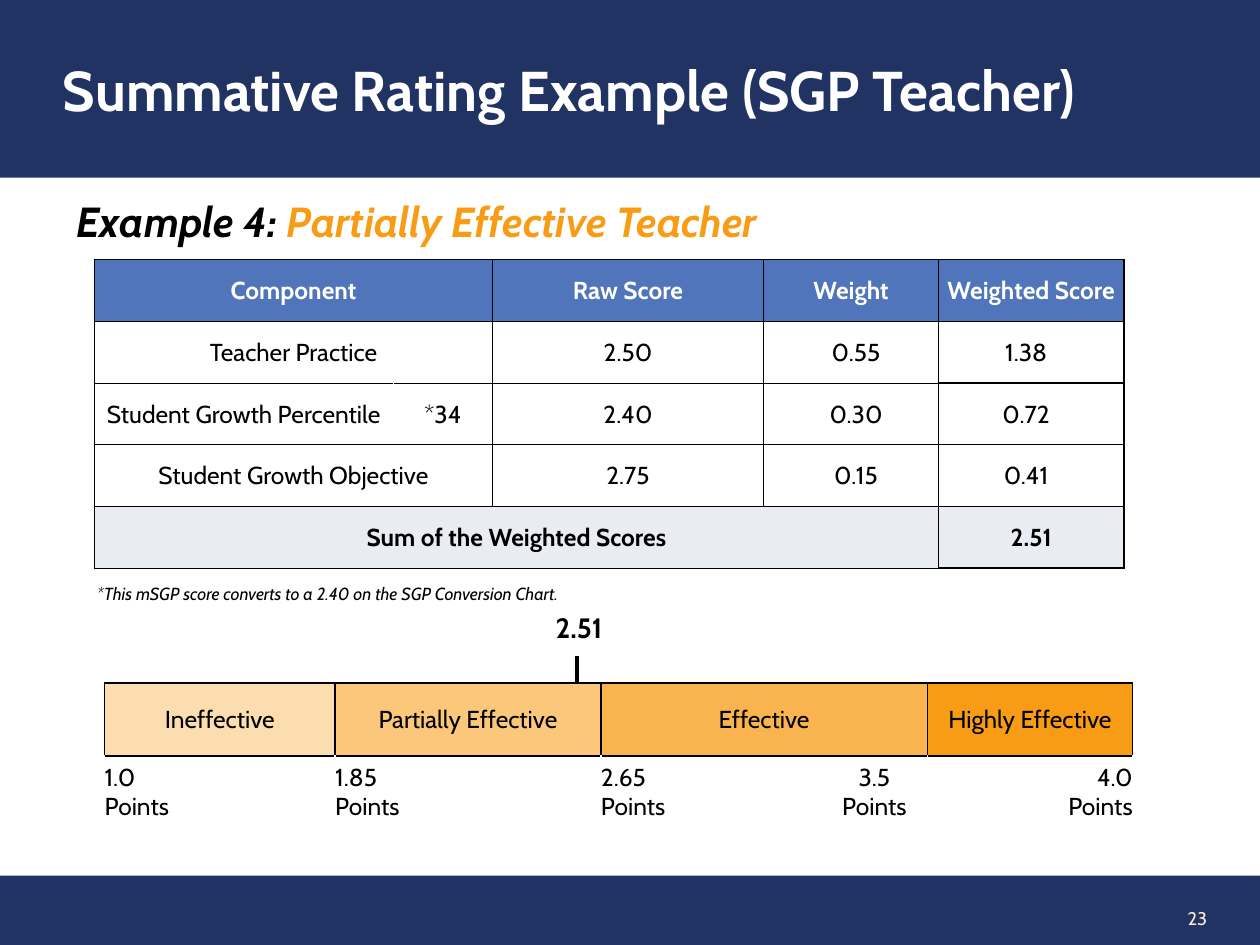
from dataclasses import dataclass
from typing import Any

from lxml import etree
from pptx import Presentation
from pptx import util as u
from pptx.dml.color import RGBColor
from pptx.enum import shapes, text
from pptx.oxml import ns

NAVY, BLUE, PALE, ORANGE = "213363", "5075BB", "E9ECF3", "F89C15"
BLACK, WHITE, CREAM = "000000", "FFFFFF", "FEEBD0"
LEFT, CENTER, RIGHT = text.PP_ALIGN.LEFT, text.PP_ALIGN.CENTER, text.PP_ALIGN.RIGHT
MIDDLE, TOP = text.MSO_ANCHOR.MIDDLE, text.MSO_ANCHOR.TOP


def rgb(value):
    return RGBColor.from_string(value)


def child(parent, tag, **attributes):
    return etree.SubElement(parent, ns.qn(tag), attributes)


def write(frame, lines, size=14, color=BLACK, bold=False, italic=False, align=LEFT,
          font="Cabin", tab=None):
    """Fill a text frame; each line is a string or a list of (words, color) runs."""
    for index, line in enumerate(lines):
        paragraph = frame.paragraphs[0] if index == 0 else frame.add_paragraph()
        paragraph.alignment = align
        if tab:
            stops = child(paragraph._p.get_or_add_pPr(), "a:tabLst")
            child(stops, "a:tab", pos=str(u.Inches(tab)), algn="ctr")
        for words, shade in [(line, color)] if isinstance(line, str) else line:
            run = paragraph.add_run()
            run.text = words
            run.font.name, run.font.size = font, u.Pt(size)
            run.font.bold, run.font.italic = bold, italic
            run.font.color.rgb = rgb(shade)


@dataclass
class Deck:
    """Holds the current slide and its text font, and adds elements to it."""
    slide: Any
    font: str = "Cabin"

    def band(self, top, height, lines=(), **style):
        band = self.slide.shapes.add_shape(
            shapes.MSO_SHAPE.RECTANGLE, 0, u.Inches(top), u.Inches(10), u.Inches(height))
        band.shadow.inherit = False
        band.fill.solid()
        band.fill.fore_color.rgb = rgb(NAVY)
        band.line.fill.background()
        band.text_frame.margin_left = u.Inches(0.5)
        band.text_frame.vertical_anchor = MIDDLE
        write(band.text_frame, lines, font=self.font, **style)

    def label(self, left, top, width, height, line, anchor=TOP, **style):
        box = self.slide.shapes.add_textbox(*map(u.Inches, (left, top, width, height)))
        box.text_frame.word_wrap = True
        box.text_frame.vertical_anchor = anchor
        write(box.text_frame, [line], font=self.font, **style)

    def marker(self, x, top, bottom):
        marker = self.slide.shapes.add_connector(
            shapes.MSO_CONNECTOR.STRAIGHT, *map(u.Inches, (x, top, x, bottom)))
        marker.line.color.rgb = rgb(BLACK)
        marker.line.width = u.Pt(2)
        child(marker._element.spPr, "a:effectLst")

    def table(self, left, top, columns, rows):
        grid = self.slide.shapes.add_table(
            len(rows), len(columns), *map(u.Inches, (left, top, sum(columns), sum(rows)))).table
        grid.first_row = grid.horz_banding = False
        for column, width in zip(grid.columns, columns):
            column.width = u.Inches(width)
        for row, height in zip(grid.rows, rows):
            row.height = u.Inches(height)
        return grid

    def cell(self, cell, lines, fill=None, alpha=None, borders=None, insets=(0.01, 0.01, 0.01, 0),
             anchor=MIDDLE, **style):
        cell.margin_left, cell.margin_top, cell.margin_right, cell.margin_bottom = map(
            u.Inches, insets)
        cell.vertical_anchor = anchor
        properties = cell._tc.get_or_add_tcPr()
        for side in "LRTB":
            color, width = borders[side]
            edge = child(properties, f"a:ln{side}", w=str(u.Pt(width)))
            child(child(edge, "a:solidFill"), "a:srgbClr", val=color)
        if fill:
            cell.fill.solid()
            cell.fill.fore_color.rgb = rgb(fill)
        else:
            cell.fill.background()
        if alpha:
            shade = properties.find(ns.qn("a:solidFill")).find(ns.qn("a:srgbClr"))
            child(shade, "a:alpha", val=str(alpha * 1000))
        write(cell.text_frame, lines, font=self.font, **style)


def add_scale(deck):
    scale = deck.table(0.83, 5.42, [1.83, 2.11, 2.59, 1.63], [0.58, 0.67])
    ratings = [
        ("Ineffective", 34, ["1.0", "Points"], {}),
        ("Partially Effective", 56, ["1.85", "Points"], {}),
        ("Effective", 75, ["2.65\t3.5", "Points\tPoints"], {"tab": 2.17}),
        ("Highly Effective", None, ["4.0", "Points"], {"align": RIGHT}),
    ]
    black = dict.fromkeys("LRTB", (BLACK, 1))
    white = dict.fromkeys("LRB", (WHITE, 1)) | {"T": (BLACK, 1)}
    for column, (rating, alpha, points, style) in enumerate(ratings):
        deck.cell(scale.cell(0, column), [rating], fill=ORANGE, alpha=alpha, borders=black,
                  align=CENTER)
        deck.cell(scale.cell(1, column), points, borders=white, insets=(0, 0.05, 0, 0),
                  anchor=TOP, **style)


def add_scores(deck):
    rows = [
        ["Component", "", "Raw Score", "Weight", "Weighted Score"],
        ["Teacher Practice", "", "2.50", "0.55", "1.38"],
        ["Student Growth Percentile", "*34", "2.40", "0.30", "0.72"],
        ["Student Growth Objective", "", "2.75", "0.15", "0.41"],
        ["Sum of the Weighted Scores", "", "", "", "2.51"],
    ]
    scores = deck.table(0.75, 2.06, [2.37, 0.79, 2.15, 1.39, 1.47], [0.49] * len(rows))
    for row, last in [(0, 1), (1, 1), (3, 1), (4, 3)]:
        scores.cell(row, 0).merge(scores.cell(row, last))
    body_insets = {3: (0.09, 0.01, 0.01, 0), 4: (0.01, 0.01, 0.09, 0)}
    for row, entries in enumerate(rows):
        header, total = row == 0, row == len(rows) - 1
        for column, entry in enumerate(entries):
            borders = dict.fromkeys("LRTB", (BLACK, 0.5))
            if column == 4:
                borders |= dict.fromkeys("RTB", (BLACK, 1))
            if entries[1] and column < 2:
                borders["RL"[column]] = (WHITE, 0.5)
            style = {}
            if not header and not total and column in body_insets:
                style["insets"] = body_insets[column]
            deck.cell(scores.cell(row, column), [entry] if entry else [],
                      fill=BLUE if header else PALE if total else WHITE, borders=borders,
                      color=WHITE if header else BLACK, bold=header or total, align=CENTER,
                      **style)


def main():
    presentation = Presentation()
    presentation.slide_width, presentation.slide_height = u.Inches(10), u.Inches(7.5)
    deck = Deck(presentation.slides.add_slide(presentation.slide_layouts[6]))
    deck.band(6.95, 0.55)
    deck.label(8.22, 7.09, 1.46, 0.4, "23", anchor=MIDDLE, size=10.5, color=CREAM, align=RIGHT)
    add_scale(deck)
    deck.band(0, 1.41, ["Summative Rating Example (SGP Teacher)"], size=32, color=WHITE, bold=True)
    deck.label(4.1, 4.8, 0.99, 0.37, "2.51", size=16, bold=True, align=CENTER)
    deck.marker(4.58, 5.21, 5.42)
    add_scores(deck)
    deck.label(0.67, 4.58, 4.21, 0.27,
               "*This mSGP score converts to a 2.40 on the SGP Conversion Chart.",
               size=10, italic=True)
    deck.label(0.51, 1.5, 5.8, 0.5,
               [("Example 4:", BLACK), (" Partially Effective Teacher", ORANGE)],
               size=24, bold=True, italic=True)
    presentation.save("out.pptx")


if __name__ == "__main__":
    main()
